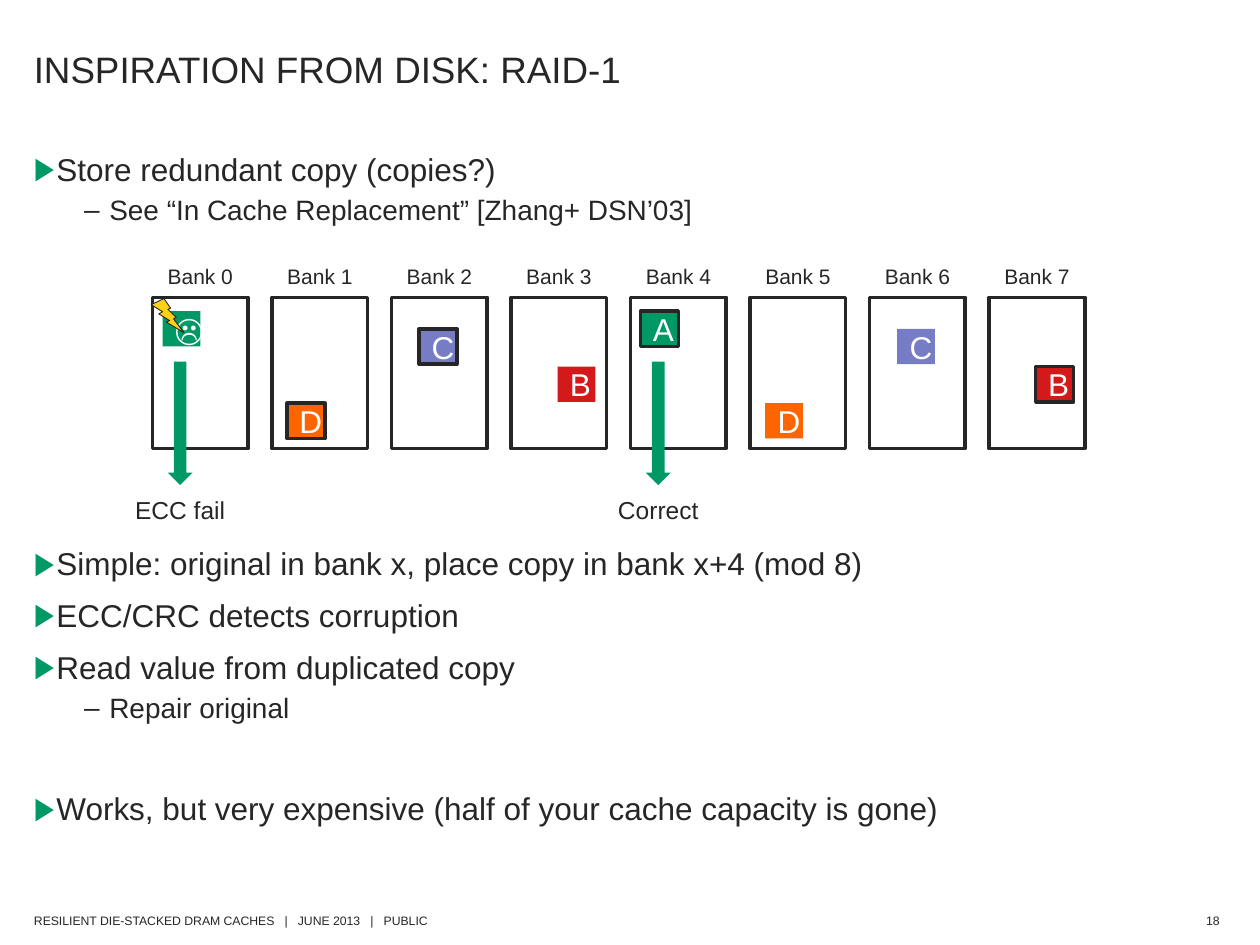
import pptx
import pptx.dml.color
import pptx.enum.shapes
import pptx.enum.text
import pptx.oxml
import pptx.oxml.ns
import pptx.util

Inches = pptx.util.Inches
Pt = pptx.util.Pt
ALIGN = pptx.enum.text.PP_ALIGN
ANCHOR = pptx.enum.text.MSO_ANCHOR
SHAPE = pptx.enum.shapes.MSO_SHAPE

DARK, WHITE, GREEN = "262626", "FFFFFF", "009966"
RED, VIOLET, ORANGE, YELLOW = "D31919", "767DC5", "FC6500", "FCD116"

BANK_COUNT = 8
BANK_LEFT, BANK_TOP, BANK_WIDTH, BANK_HEIGHT = 1.21, 2.36, 0.76, 1.2
BANK_PITCH = (7.85 - BANK_LEFT) / (BANK_COUNT - 1)

# letter, bank of the first block, offset in the bank, top, fill, bank with the outlined block
BLOCKS = [
    ("A", 0, 0.08, 2.47, GREEN, 4),
    ("D", 1, 0.12, 3.2, ORANGE, 1),
    ("C", 2, 0.22, 2.61, VIOLET, 2),
    ("B", 3, 0.37, 2.91, RED, 7),
]
READS = [(0, "ECC fail"), (4, "Correct")]

STORE_POINTS = [
    (0, "Store redundant copy (copies?)", 0),
    (1, "See “In Cache Replacement” [Zhang+ DSN’03]", 3),
]
SCHEME_POINTS = [
    (0, "Simple: original in bank x, place copy in bank x+4 (mod 8)", 0),
    (0, "ECC/CRC detects corruption", 8),
    (0, "Read value from duplicated copy", 8),
    (1, "Repair original", 3),
    (0, "Works, but very expensive (half of your cache capacity is gone)", 37),
]


def color(value):
    """Return the colour for a hex string."""
    return pptx.dml.color.RGBColor.from_string(value)


def bank_left(bank):
    """Return the left edge of a bank in inches."""
    return BANK_LEFT + bank * BANK_PITCH


def write(paragraph, text, size=18, fill=DARK, align=ALIGN.LEFT, before=0):
    """Put formatted text in a paragraph."""
    paragraph.add_run().text = text
    paragraph.alignment = align
    paragraph.space_before = Pt(before)
    font = paragraph.runs[0].font
    font.size = Pt(size)
    font.name = "Arial"
    font.color.rgb = color(fill)


def add_box(slide, left, top, width, height, wrap=False, anchor=ANCHOR.TOP):
    """Add an empty text box and return its text frame."""
    box = slide.shapes.add_textbox(Inches(left), Inches(top), Inches(width), Inches(height))
    frame = box.text_frame
    frame.word_wrap = wrap
    frame.vertical_anchor = anchor
    return frame


def add_label(slide, text, center, top, width, height, size):
    """Add a centred one-line label."""
    frame = add_box(slide, center - width / 2, top, width, height)
    write(frame.paragraphs[0], text, size=size, align=ALIGN.CENTER)


def add_footer(slide, text, left, width, align):
    """Add one small footer text."""
    frame = add_box(slide, left, 7.2, width, 0.21, anchor=ANCHOR.MIDDLE)
    frame.margin_left = frame.margin_right = Inches(0.09)
    frame.margin_top = frame.margin_bottom = Inches(0.04)
    write(frame.paragraphs[0], text, size=7, align=align)


def add_bullet(paragraph, level):
    """Give a paragraph the indent and bullet of its level."""
    properties = paragraph._p.get_or_add_pPr()
    margin, hanging, mark = [(0.18, 0.18, "▶"), (0.6, 0.2, "–")][level]
    properties.set("marL", str(Inches(margin)))
    properties.set("indent", str(-Inches(hanging)))
    paragraph.level = level
    namespace = pptx.oxml.ns.nsdecls("a")
    if level == 0:
        properties.append(pptx.oxml.parse_xml(
            f'<a:buClr {namespace}><a:srgbClr val="{GREEN}"/></a:buClr>'))
    properties.append(pptx.oxml.parse_xml(f'<a:buFont {namespace} typeface="Arial"/>'))
    properties.append(pptx.oxml.parse_xml(f'<a:buChar {namespace} char="{mark}"/>'))


def add_points(slide, top, height, points):
    """Add a text box with bulleted points."""
    frame = add_box(slide, 0.17, top, 9, height, wrap=True)
    for index, (level, text, before) in enumerate(points):
        paragraph = frame.add_paragraph() if index else frame.paragraphs[0]
        add_bullet(paragraph, level)
        write(paragraph, text, size=(18, 16)[level], before=before)


def add_shape(slide, kind, left, top, width, height, fill=None, line_width=0):
    """Add a preset shape with an optional fill and dark outline."""
    shape = slide.shapes.add_shape(
        kind, Inches(left), Inches(top), Inches(width), Inches(height))
    shape.shadow.inherit = False
    if fill:
        shape.fill.solid()
        shape.fill.fore_color.rgb = color(fill)
    else:
        shape.fill.background()
    if line_width:
        shape.line.color.rgb = color(DARK)
        shape.line.width = Pt(line_width)
    else:
        shape.line.fill.background()
    return shape


def add_block(slide, text, left, top, fill, outlined):
    """Add a cache block with its letter."""
    shape = add_shape(slide, SHAPE.RECTANGLE, left, top, 0.3, 0.28, fill, 2 if outlined else 0)
    shape.text_frame.vertical_anchor = ANCHOR.MIDDLE
    write(shape.text_frame.paragraphs[0], text, fill=WHITE, align=ALIGN.CENTER)


def add_banks(slide):
    """Add the row of banks with their names."""
    for bank in range(BANK_COUNT):
        left = bank_left(bank)
        add_shape(slide, SHAPE.RECTANGLE, left, BANK_TOP, BANK_WIDTH, BANK_HEIGHT, line_width=2)
        add_label(slide, f"Bank {bank}", left + BANK_WIDTH / 2, 2.04, 0.72, 0.3, 12)


def add_blocks(slide):
    """Add each block in its bank and in the bank four places on."""
    for letter, first, offset, top, fill, outlined in BLOCKS:
        for bank in (first, first + 4):
            text = "☹" if bank == 0 else letter
            add_block(slide, text, bank_left(bank) + offset, top, fill, bank == outlined)


def add_read(slide, bank, result):
    """Add the arrow out of a bank and the result of the read."""
    center = bank_left(bank) + 0.22
    add_shape(slide, SHAPE.DOWN_ARROW, center - 0.1, 2.87, 0.2, 0.98, GREEN)
    add_label(slide, result, center, 3.88, 0.92, 0.34, 14)


def main():
    """Build the slide and save it."""
    presentation = pptx.Presentation()
    presentation.slide_width, presentation.slide_height = Inches(10), Inches(7.5)
    slide = presentation.slides.add_slide(presentation.slide_layouts[6])

    add_footer(slide, "18", 9.47, 0.3, ALIGN.RIGHT)
    add_footer(slide, "RESILIENT DIE-STACKED DRAM CACHES   |   JUNE 2013   |   PUBLIC",
               0.18, 3.33, ALIGN.LEFT)
    title = add_box(slide, 0.17, 0.2, 8.2, 0.7, wrap=True, anchor=ANCHOR.MIDDLE)
    write(title.paragraphs[0], "INSPIRATION FROM DISK: RAID-1", size=21)
    add_points(slide, 1.14, 0.9, STORE_POINTS)
    add_banks(slide)
    add_points(slide, 4.27, 2.92, SCHEME_POINTS)
    add_blocks(slide)
    add_shape(slide, SHAPE.LIGHTNING_BOLT, 1.2, 2.37, 0.26, 0.27, YELLOW, 0.5)
    for bank, result in READS:
        add_read(slide, bank, result)
    presentation.save("out.pptx")


if __name__ == "__main__":
    main()
